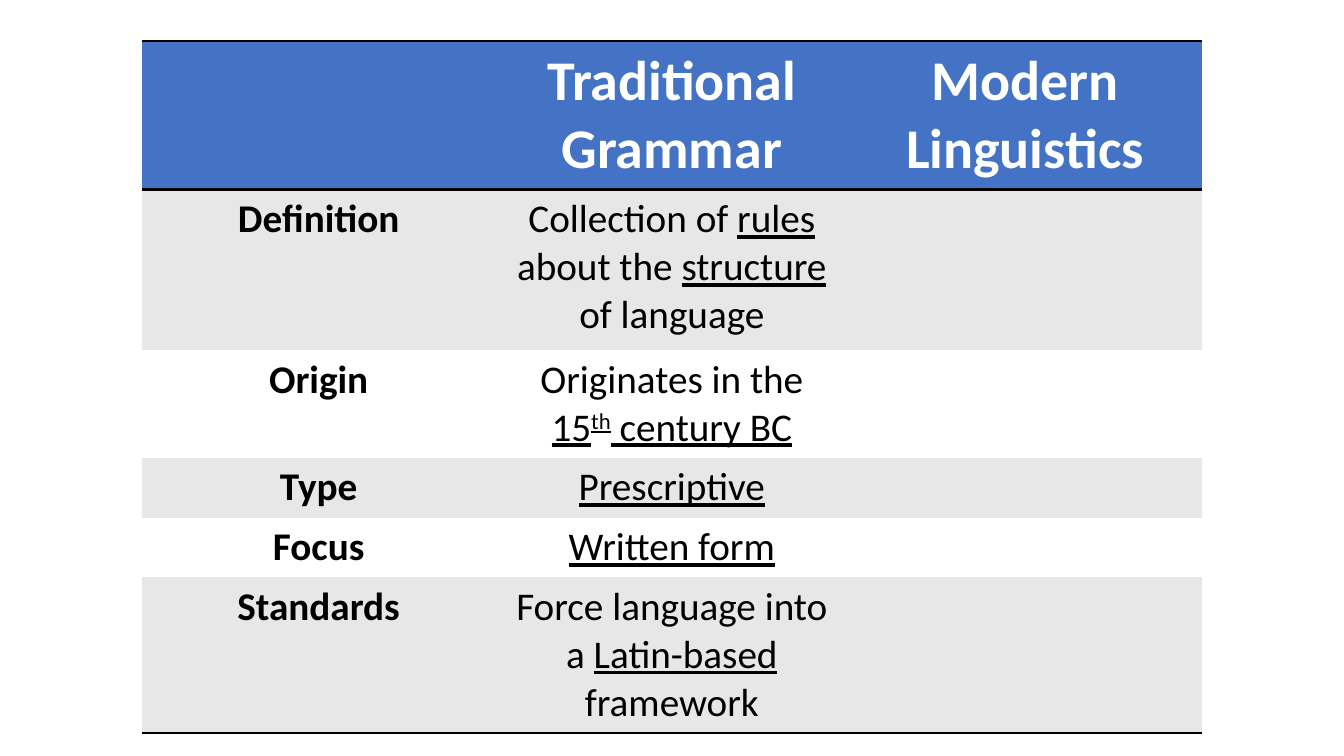
import pptx
import pptx.dml.color
import pptx.enum.text
import pptx.oxml
import pptx.oxml.ns
import pptx.util
from pptx.util import Cm

BLUE = pptx.dml.color.RGBColor(0x44, 0x72, 0xC4)
GREY = pptx.dml.color.RGBColor(0xE7, 0xE7, 0xE7)
WHITE = pptx.dml.color.RGBColor(0xFF, 0xFF, 0xFF)
BLACK = pptx.dml.color.RGBColor(0x00, 0x00, 0x00)
NO_STYLE_NO_GRID = "{2D5ABB26-0587-4C30-8999-92F81FD0307C}"
BORDER_WIDTH = pptx.util.Pt(2)

# Each cell is a list of (text, marks): u = underlined, s = superscript
ROWS = [
    (2.67, [[], [("Traditional Grammar", "")], [("Modern Linguistics", "")]]),
    (4.04, [[("Definition", "")],
            [("Collection of ", ""), ("rules ", "u"), ("about the ", ""),
             ("structure", "u"), (" of language", "")], []]),
    (2.18, [[("Origin", "")],
            [("Originates in the ", ""), ("15", "u"), ("th", "us"),
             (" century BC", "u")], []]),
    (1.27, [[("Type", "")], [("Prescriptive", "u")], []]),
    (1.27, [[("Focus", "")], [("Written form", "u")], []]),
    (3.12, [[("Standards", "")],
            [("Force language into a ", ""), ("Latin-based", "u"),
             (" framework", "")], []]),
]


def add_borders(cell, sides):
    """Draw black lines on the given sides (T, B), ahead of the cell's fill."""
    properties = cell._tc.get_or_add_tcPr()
    for position, side in enumerate(sides):
        properties.insert(position, pptx.oxml.parse_xml(
            f'<a:ln{side} {pptx.oxml.ns.nsdecls("a")} w="{BORDER_WIDTH}">'
            f'<a:solidFill><a:srgbClr val="{BLACK}"/></a:solidFill>'
            f'</a:ln{side}>'))


deck = pptx.Presentation()
deck.slide_width, deck.slide_height = Cm(33.87), Cm(19.05)
page = deck.slides.add_slide(deck.slide_layouts[6])

frame = page.shapes.add_table(len(ROWS), 3, Cm(3.58), Cm(1.04), Cm(26.7), Cm(17.32))
table = frame.table
table.first_row = table.horz_banding = False
table._tbl.tblPr.find(pptx.oxml.ns.qn("a:tableStyleId")).text = NO_STYLE_NO_GRID

for row_number, (height, contents) in enumerate(ROWS):
    header = row_number == 0
    table.rows[row_number].height = Cm(height)
    for column_number, spans in enumerate(contents):
        cell = table.cell(row_number, column_number)
        cell.margin_left = cell.margin_right = Cm(0.33)
        cell.margin_top = cell.margin_bottom = Cm(0.15)
        cell.fill.solid()
        cell.fill.fore_color.rgb = BLUE if header else GREY if row_number % 2 else WHITE
        if header:
            add_borders(cell, "TB")
        elif row_number == len(ROWS) - 1:
            add_borders(cell, "B")

        para = cell.text_frame.paragraphs[0]
        para.alignment = pptx.enum.text.PP_ALIGN.CENTER
        for text, marks in spans:
            span = para.add_run()
            span.text = text
            span.font.name = "Calibri"
            span.font.size = pptx.util.Pt(40 if header else 28)
            span.font.bold = header or column_number == 0
            span.font.underline = "u" in marks
            span.font.color.rgb = WHITE if header else BLACK
            if "s" in marks:
                span.font._element.set("baseline", "30000")

# Row heights reset the frame, so its full height is given last
frame.height = Cm(17.32)

deck.save("out.pptx")
